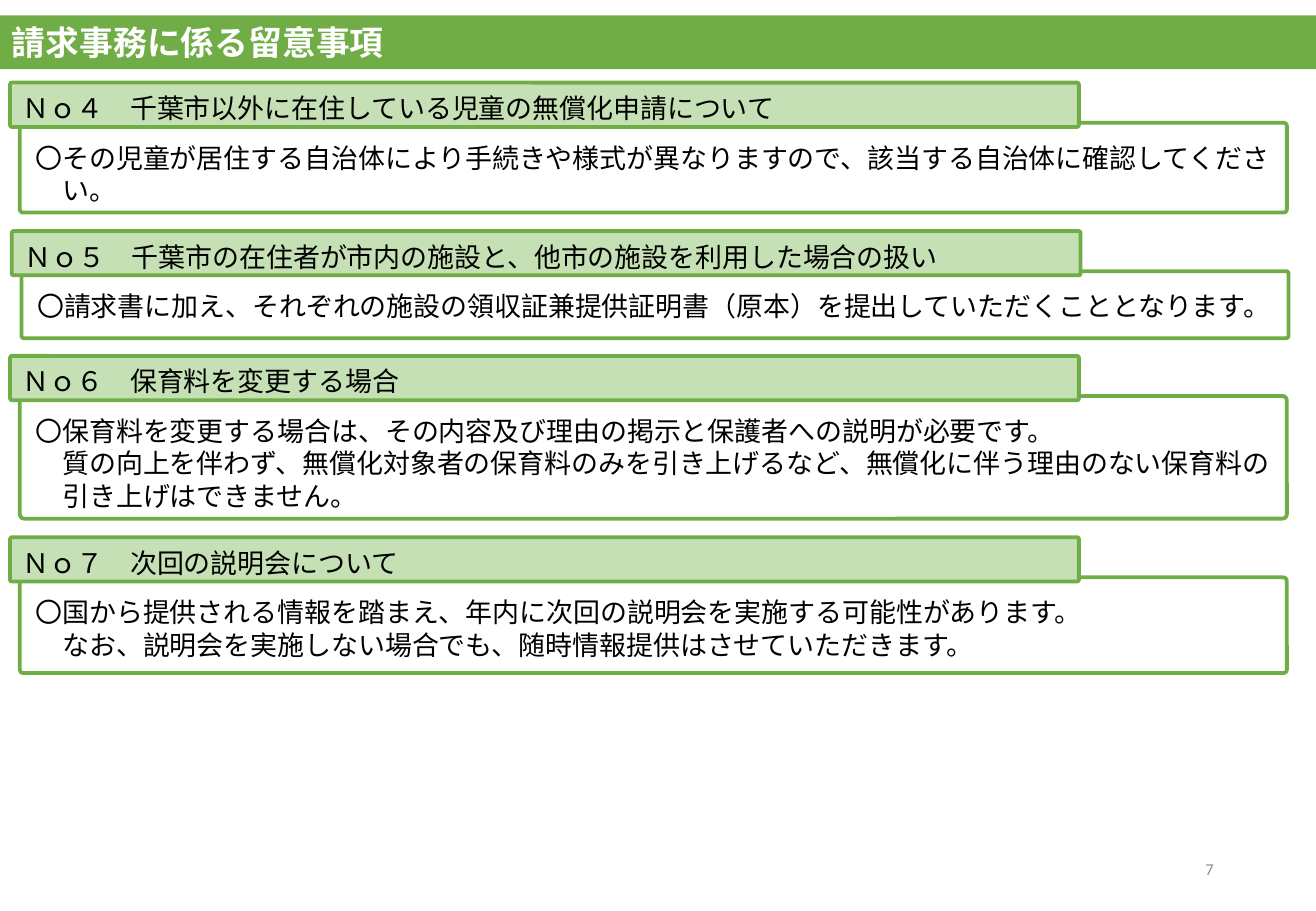
import pptx
import pptx.util
import pptx.dml.color
import pptx.enum.shapes
import pptx.enum.text
import pptx.oxml

Pt = pptx.util.Pt
RGB = pptx.dml.color.RGBColor
SHAPE = pptx.enum.shapes.MSO_SHAPE
ANCHOR = pptx.enum.text.MSO_ANCHOR
ALIGN = pptx.enum.text.PP_ALIGN

GREEN = RGB(0x70, 0xAD, 0x47)
PALE_GREEN = RGB(0xC5, 0xE0, 0xB4)
WHITE = RGB(0xFF, 0xFF, 0xFF)
BLACK = RGB(0, 0, 0)
GRAY = RGB(0x8C, 0x8C, 0x8C)
JP_FONT = "Noto Sans CJK JP"

SLIDE_W, SLIDE_H = 780, 540
NOTE_W = 757.5

# left, top, height of the whole note, heading, body lines
NOTES = [
    (6, 49, 77, "Ｎｏ４　千葉市以外に在住している児童の無償化申請について",
     ["〇その児童が居住する自治体により手続きや様式が異なりますので、該当する自治体に確認してくださ",
      "　い。"]),
    (7, 137, 63.5, "Ｎｏ５　千葉市の在住者が市内の施設と、他市の施設を利用した場合の扱い",
     ["〇請求書に加え、それぞれの施設の領収証兼提供証明書（原本）を提出していただくこととなります。"]),
    (6, 211, 96.5, "Ｎｏ６　保育料を変更する場合",
     ["〇保育料を変更する場合は、その内容及び理由の掲示と保護者への説明が必要です。",
      "　質の向上を伴わず、無償化対象者の保育料のみを引き上げるなど、無償化に伴う理由のない保育料の",
      "　引き上げはできません。"]),
    (6, 318.5, 80.5, "Ｎｏ７　次回の説明会について",
     ["〇国から提供される情報を踏まえ、年内に次回の説明会を実施する可能性があります。",
      "　なお、説明会を実施しない場合でも、随時情報提供はさせていただきます。"]),
]


def write(shape, lines, size=16, color=BLACK, font=JP_FONT, bold=False,
          align=ALIGN.LEFT, anchor=ANCHOR.MIDDLE, insets=(7.2, 3.6, 7.2, 3.6),
          line_spacing=None):
    tf = shape.text_frame
    tf.word_wrap = True
    tf.vertical_anchor = anchor
    tf.margin_left, tf.margin_top, tf.margin_right, tf.margin_bottom = map(Pt, insets)
    for i, line in enumerate(lines):
        p = tf.paragraphs[0] if i == 0 else tf.add_paragraph()
        p.alignment = align
        if line_spacing:
            p.line_spacing = Pt(line_spacing)
        r = p.add_run()
        r.text = line
        r.font.size = Pt(size)
        r.font.bold = bold
        r.font.name = font
        r.font.color.rgb = color
        ea = pptx.oxml.parse_xml(
            '<a:ea xmlns:a="http://schemas.openxmlformats.org/drawingml/2006/main"'
            f' typeface="{font}"/>')
        r.font._element.find(pptx.oxml.ns.qn("a:latin")).addnext(ea)


def add_box(s, kind, x, y, w, h, fill=None, line=None, corner=None):
    sp = s.shapes.add_shape(kind, Pt(x), Pt(y), Pt(w), Pt(h))
    sp.shadow.inherit = False
    if corner is not None:
        sp.adjustments[0] = corner
    if fill is None:
        sp.fill.background()
    else:
        sp.fill.solid()
        sp.fill.fore_color.rgb = fill
    if line is None:
        sp.line.fill.background()
    else:
        sp.line.color.rgb = line
        sp.line.width = Pt(2.25)
    return sp


def add_text(s, x, y, w, h, lines, **fmt):
    write(s.shapes.add_textbox(Pt(x), Pt(y), Pt(w), Pt(h)), lines, **fmt)


def add_title_bar(s, x, y, w, h, title):
    bar = add_box(s, SHAPE.RECTANGLE, x, y, w, h, fill=GREEN)
    write(bar, [title], size=20, color=WHITE, bold=True)


def add_note(s, x, y, w, h, heading, lines):
    """Framed body text with a heading tab over its top left edge."""
    add_box(s, SHAPE.ROUNDED_RECTANGLE, x + 5.75, y + 23.75, w - 6.5, h - 23.75,
            line=GREEN, corner=0.036)
    tab = add_box(s, SHAPE.ROUNDED_RECTANGLE, x, y, 633.5, 26.25,
                  fill=PALE_GREEN, line=GREEN, corner=0.042)
    write(tab, [heading], insets=(7.2, 7.2, 7.2, 3.6))
    add_text(s, x + 8, y + 31, w + 1.5, 7.2 + 19.3 * len(lines), lines,
             anchor=ANCHOR.TOP, line_spacing=19.3)


def add_page_number(s, x, y, w, h, number):
    add_text(s, x, y, w, h, [number], size=9.8, color=GRAY, font="Calibri",
             align=ALIGN.RIGHT)


def main():
    prs = pptx.Presentation()
    prs.slide_width, prs.slide_height = Pt(SLIDE_W), Pt(SLIDE_H)
    s = prs.slides.add_slide(prs.slide_layouts[6])
    add_title_bar(s, 0, 9.2, SLIDE_W, 31.8, "請求事務に係る留意事項")
    for x, y, h, heading, lines in NOTES:
        add_note(s, x, y, NOTE_W, h, heading, lines)
    add_page_number(s, 551, 500.5, 175.5, 28.75, "7")
    prs.save("out.pptx")


if __name__ == "__main__":
    main()
